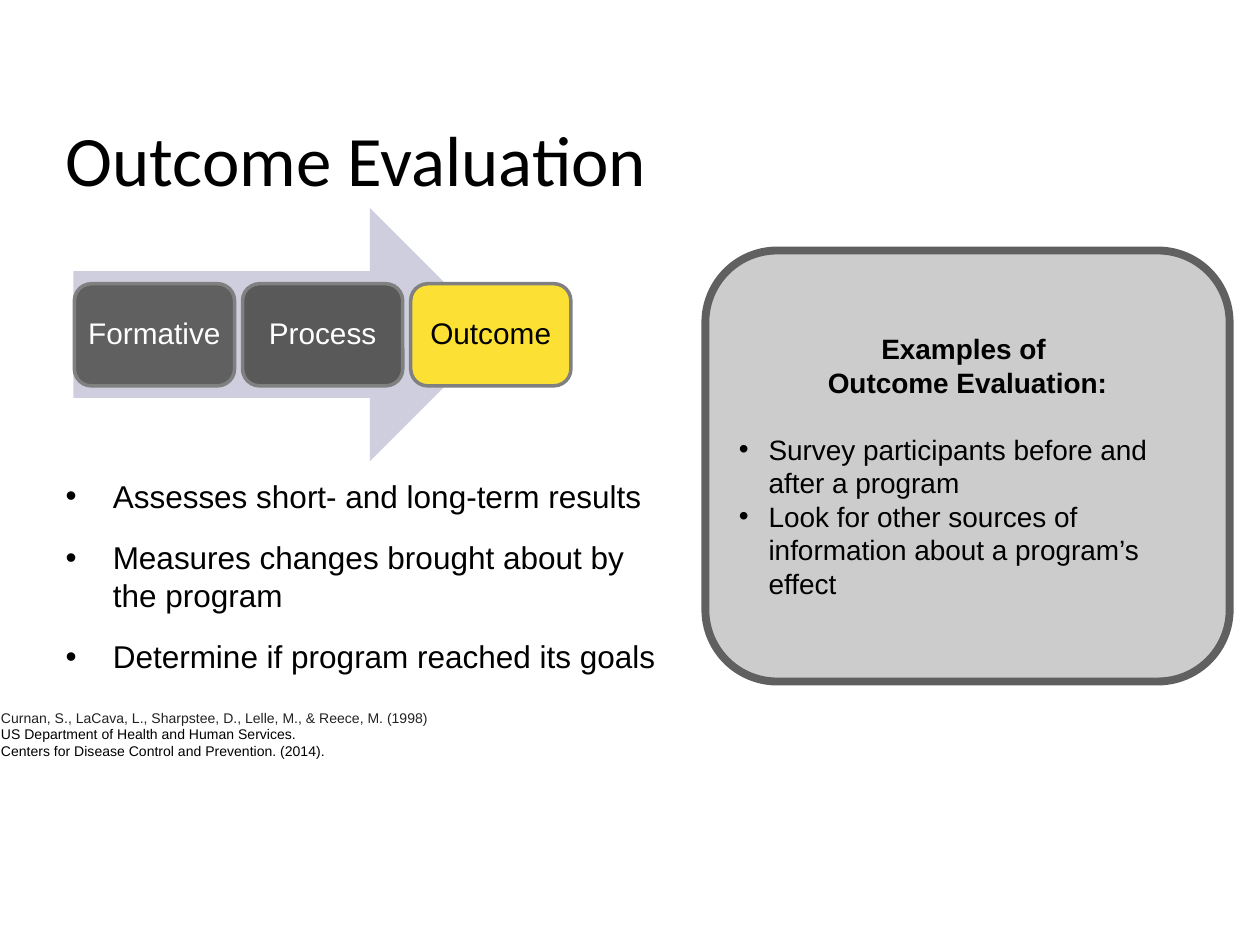
from lxml.etree import SubElement
from pptx import Presentation
from pptx.dml.color import RGBColor
from pptx.enum.shapes import MSO_SHAPE
from pptx.enum.text import MSO_ANCHOR, MSO_AUTO_SIZE, PP_ALIGN
from pptx.oxml.ns import qn
from pptx.util import Cm, Pt


def color(code):
    return RGBColor.from_string(code)


def place(item, left, top, width, height):
    item.left, item.top = Cm(left), Cm(top)
    item.width, item.height = Cm(width), Cm(height)


def write(para, text, size, code="000000", font="Arial", bold=False):
    run = para.add_run()
    run.text = text
    run.font.size = Pt(size)
    run.font.name = font
    run.font.bold = bold
    run.font.color.rgb = color(code)


def lines(frame, count):
    """Return the given number of paragraphs from an empty frame."""
    return [frame.paragraphs[0]] + [frame.add_paragraph() for _ in range(count - 1)]


def bullet(para, indent):
    props = para._p.get_or_add_pPr()
    props.set("marL", str(Cm(indent)))
    props.set("indent", str(-Cm(indent)))
    SubElement(props, qn("a:buFont"), typeface="Arial")
    SubElement(props, qn("a:buChar"), char="•")


def add_block(slide, kind, box, fill, edge=None, weight=0):
    shape = slide.shapes.add_shape(kind, *map(Cm, box))
    shape.shadow.inherit = False
    shape.fill.solid()
    shape.fill.fore_color.rgb = color(fill)
    if edge:
        shape.line.color.rgb = color(edge)
        shape.line.width = Pt(weight)
    else:
        shape.line.fill.background()
    frame = shape.text_frame
    frame.word_wrap = True
    frame.vertical_anchor = MSO_ANCHOR.MIDDLE
    return frame


def add_title(slide):
    title = slide.shapes.title
    place(title, 1.07, 2.13, 23.24, 2.11)
    frame = title.text_frame
    frame.auto_size = MSO_AUTO_SIZE.NONE
    frame.vertical_anchor = MSO_ANCHOR.MIDDLE
    para = frame.paragraphs[0]
    para.alignment = PP_ALIGN.LEFT
    write(para, "Outcome Evaluation", 40.5, font="Calibri")


def add_points(slide):
    body = slide.placeholders[1]
    place(body, 1.07, 3.81, 12.67, 9.93)
    frame = body.text_frame
    frame.auto_size = MSO_AUTO_SIZE.NONE
    frame.vertical_anchor = MSO_ANCHOR.BOTTOM
    points = (
        "Assesses short- and long-term results",
        "Measures changes brought about by the program",
        "Determine if program reached its goals",
    )
    for para, text in zip(lines(frame, len(points)), points):
        para.space_before = Pt(0)
        para.space_after = Pt(13.5)
        bullet(para, 0.95)
        write(para, text, 18)


def add_stages(slide):
    add_block(slide, MSO_SHAPE.RIGHT_ARROW, (1.48, 4.19, 8.53, 5.11), "CECEDE")
    stages = (
        ("Formative", "606060", "FFFFFF"),
        ("Process", "595959", "FFFFFF"),
        ("Outcome", "FCE033", "000000"),
    )
    for i, (name, fill, ink) in enumerate(stages):
        box = (1.5 + 3.39 * i, 5.72, 3.23, 2.06)
        frame = add_block(slide, MSO_SHAPE.ROUNDED_RECTANGLE, box, fill, "808080", 2)
        frame.margin_left = frame.margin_right = Cm(0.05)
        para = frame.paragraphs[0]
        para.alignment = PP_ALIGN.CENTER
        para.line_spacing = 0.9
        write(para, name, 17, ink)


def add_sources(slide):
    box = slide.shapes.add_textbox(Cm(-0.23), Cm(14.17), Cm(25.63), Cm(1.27))
    frame = box.text_frame
    frame.word_wrap = True
    sources = (
        ("Curnan, S., LaCava, L., Sharpstee, D., Lelle, M., & Reece, M. (1998)", "222222"),
        ("US Department of Health and Human Services.", "000000"),
        ("Centers for Disease Control and Prevention. (2014).", "000000"),
    )
    for para, (text, ink) in zip(lines(frame, len(sources)), sources):
        write(para, text, 8, ink)


def add_examples(slide):
    frame = add_block(slide, MSO_SHAPE.ROUNDED_RECTANGLE,
                      (14.22, 5.05, 10.57, 8.69), "CCCCCC", "606060", 4.5)
    heads = ("Examples of ", "Outcome Evaluation:")
    items = (
        "Survey participants before and after a program",
        "Look for other sources of information about a program’s effect",
    )
    paras = lines(frame, len(heads) + len(items))
    for para, text in zip(paras, heads):
        para.alignment = PP_ALIGN.CENTER
        write(para, text, 16, bold=True)
    for para, text in zip(paras[len(heads):], items):
        para.alignment = PP_ALIGN.LEFT
        if text == items[0]:
            para.space_before = Pt(19)
        bullet(para, 0.6)
        write(para, text, 16)


def main():
    deck = Presentation()
    deck.slide_width, deck.slide_height = Cm(25.4), Cm(19.05)
    slide = deck.slides.add_slide(deck.slide_layouts[1])
    add_title(slide)
    add_points(slide)
    add_stages(slide)
    add_sources(slide)
    add_examples(slide)
    deck.save("out.pptx")


if __name__ == "__main__":
    main()
